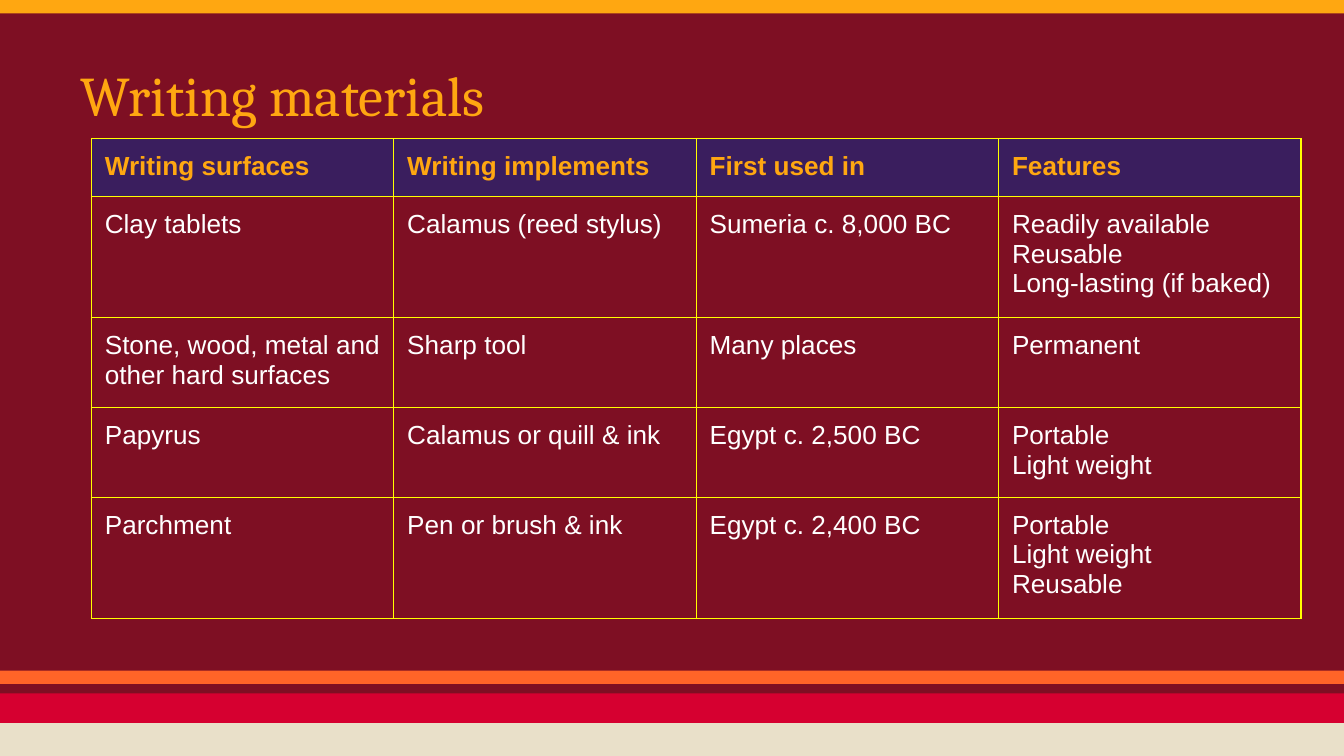
from pptx import Presentation
from pptx.dml.color import RGBColor
from pptx.enum.shapes import MSO_SHAPE
from pptx.enum.text import MSO_ANCHOR
from pptx.util import Inches, Pt
from lxml.etree import SubElement
from pptx.oxml.ns import qn

GOLD = "FFA711"
BANDS = [
    (0, 0.1, GOLD),
    (5.16, 0.25, "D60030"),
    (5.38, 0.25, "E9E0C9"),
    (4.99, 0.1, "FF6428"),
]
ROWS = [
    ["Writing surfaces", "Writing implements", "First used in", "Features"],
    ["Clay tablets", "Calamus (reed stylus)", "Sumeria c. 8,000 BC",
     "Readily available Reusable\nLong-lasting (if baked)"],
    ["Stone, wood, metal and other hard surfaces", "Sharp tool",
     "Many places", "Permanent"],
    ["Papyrus", "Calamus or quill & ink", "Egypt c. 2,500 BC",
     "Portable\vLight weight"],
    ["Parchment", "Pen or brush & ink", "Egypt c. 2,400 BC",
     "Portable\vLight weight\nReusable"],
]
LINES = [1, 3, 2, 2, 3]


def paint(fill, color):
    """Make a fill solid in a hex color."""
    fill.solid()
    fill.fore_color.rgb = RGBColor.from_string(color)


def style(frame, name, size, color, bold=False):
    """Set the font of every paragraph in a text frame."""
    for para in frame.paragraphs:
        font = para.font
        font.name, font.size, font.bold = name, Pt(size), bold
        paint(font.fill, color)


def inset(box):
    """Give a cell or text frame equal margins."""
    box.margin_left = box.margin_right = Inches(0.1)
    box.margin_top = box.margin_bottom = Inches(0.1)


def add_band(slide, top, height, color):
    """Draw a stripe across the whole slide."""
    band = slide.shapes.add_shape(
        MSO_SHAPE.RECTANGLE, 0, Inches(top), Inches(10), Inches(height))
    band.shadow.inherit = False
    band.line.fill.background()
    paint(band.fill, color)


def add_title(slide, text):
    """Write the slide title."""
    box = slide.shapes.add_textbox(
        Inches(0.5), Inches(0.23), Inches(9), Inches(0.94))
    frame = box.text_frame
    frame.word_wrap = True
    frame.vertical_anchor = MSO_ANCHOR.MIDDLE
    inset(frame)
    frame.text = text
    style(frame, "Cambria", 30, GOLD)


def add_edges(cell, color):
    """Draw thin borders on all four sides of a cell."""
    props = cell._tc.get_or_add_tcPr()
    for side in ("a:lnL", "a:lnR", "a:lnT", "a:lnB"):
        line = SubElement(props, qn(side), w=str(Pt(0.75)))
        fill = SubElement(line, qn("a:solidFill"))
        SubElement(fill, qn("a:srgbClr"), val=color)


def fill_cell(cell, text, head):
    """Write and format one table cell."""
    inset(cell)
    cell.text = text
    style(cell.text_frame, "Arial", 14, GOLD if head else "FFFFFF", head)
    add_edges(cell, "FFFF00")
    if head:
        paint(cell.fill, "3A1E5E")
    else:
        cell.fill.background()


def add_grid(slide, rows):
    """Build the table with rows as tall as their lines of text."""
    tall = [Inches(0.2 + 0.22 * count) for count in LINES]
    grid = slide.shapes.add_table(
        len(rows), len(rows[0]), Inches(0.68), Inches(1.03),
        Inches(9), sum(tall)).table
    for r, row in enumerate(rows):
        grid.rows[r].height = tall[r]
        for c, text in enumerate(row):
            fill_cell(grid.cell(r, c), text, r == 0)


def main():
    """Build and save the slide."""
    deck = Presentation()
    deck.slide_width = Inches(10)
    deck.slide_height = deck.slide_width * 9 // 16
    slide = deck.slides.add_slide(deck.slide_layouts[6])
    paint(slide.background.fill, "7E0F23")
    for band in BANDS:
        add_band(slide, *band)
    add_title(slide, "Writing materials")
    add_grid(slide, ROWS)
    deck.save("out.pptx")


if __name__ == "__main__":
    main()
